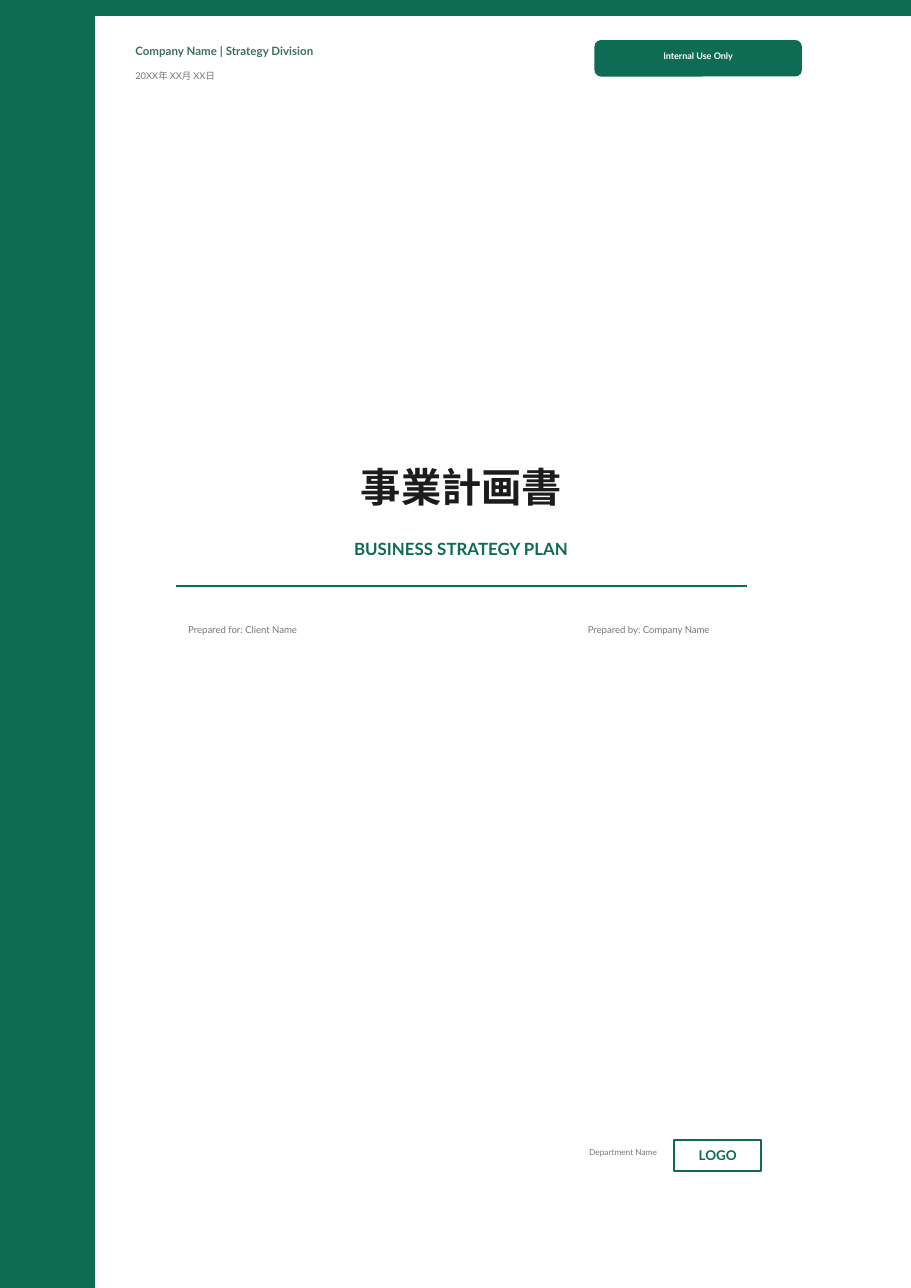
"""Build the cover page of a business strategy plan."""
from lxml.etree import SubElement
from pptx import Presentation
from pptx.dml.color import RGBColor
from pptx.enum.shapes import MSO_CONNECTOR, MSO_SHAPE
from pptx.enum.text import MSO_ANCHOR, PP_ALIGN
from pptx.oxml.ns import qn
from pptx.util import Cm, Pt

COLORS = {
    "green": "0E6B54",
    "soft_green": "3D6F61",
    "gray": "777777",
    "ink": "1C1C1C",
    "white": "FFFFFF",
}
LATIN_FONT = "Lato"
JAPANESE_FONT = "Noto Sans CJK JP"
PAGE_WIDTH, PAGE_HEIGHT = 21, 29.7
SIDEBAR_WIDTH, TOP_BAR_HEIGHT = 2.18, 0.36


def color(name):
    """Return the named palette colour."""
    return RGBColor.from_string(COLORS[name])


def write_text(shape, text, size, color_name, bold=False, align=PP_ALIGN.LEFT, font=LATIN_FONT):
    """Write one vertically centred line without margins into a shape."""
    frame = shape.text_frame
    frame.word_wrap = True
    frame.vertical_anchor = MSO_ANCHOR.MIDDLE
    frame.margin_left = frame.margin_top = frame.margin_right = frame.margin_bottom = 0
    paragraph = frame.paragraphs[0]
    paragraph.alignment = align
    run = paragraph.add_run()
    run.text = text
    run.font.name = font
    run.font.size = Pt(size)
    run.font.bold = bold
    run.font.color.rgb = color(color_name)
    east_asian = SubElement(run._r.get_or_add_rPr(), qn("a:ea"))
    east_asian.set("typeface", JAPANESE_FONT)


def add_label(slide, box, text, size, color_name, **style):
    """Add a text box with one line."""
    shape = slide.shapes.add_textbox(*map(Cm, box))
    write_text(shape, text, size, color_name, **style)


def add_box(slide, kind, box, line_width=0.88, filled=True):
    """Add a green outlined shape, filled or hollow."""
    shape = slide.shapes.add_shape(kind, *map(Cm, box))
    shape.shadow.inherit = False
    if filled:
        shape.fill.solid()
        shape.fill.fore_color.rgb = color("green")
    else:
        shape.fill.background()
    shape.line.color.rgb = color("green")
    shape.line.width = Pt(line_width)
    return shape


def add_rule(slide, left, right, top):
    """Add a thin horizontal green line."""
    rule = slide.shapes.add_connector(MSO_CONNECTOR.STRAIGHT, Cm(left), Cm(top), Cm(right), Cm(top))
    rule.line.color.rgb = color("green")
    rule.line.width = Pt(0.96)
    SubElement(rule._element.spPr, qn("a:effectLst"))


def add_header(slide):
    """Add the company, the date and the confidentiality badge."""
    add_label(slide, (3.12, 0.94, 7.29, 0.48), "Company Name | Strategy Division", 7.5, "soft_green", bold=True)
    add_label(slide, (3.12, 1.55, 4.19, 0.41), "20XX年 XX月 XX日", 6.1, "gray")
    badge = add_box(slide, MSO_SHAPE.ROUNDED_RECTANGLE, (13.72, 0.94, 4.75, 0.81))
    write_text(badge, "Internal Use Only", 5.9, "white", bold=True, align=PP_ALIGN.CENTER)
    badge.text_frame.margin_bottom = Cm(0.13)


def add_title(slide):
    """Add the title, the subtitle and the two parties."""
    add_label(slide, (3.78, 10.59, 13.72, 1.24), "事業計画書", 26.3, "ink",
              bold=True, align=PP_ALIGN.CENTER, font=JAPANESE_FONT)
    add_label(slide, (4.75, 12.34, 11.76, 0.64), "BUSINESS STRATEGY PLAN", 11, "green",
              bold=True, align=PP_ALIGN.CENTER)
    add_rule(slide, 4.06, 17.22, 13.51)
    add_label(slide, (4.34, 14.3, 5.87, 0.43), "Prepared for: Client Name", 6.3, "gray")
    add_label(slide, (10.77, 14.3, 5.59, 0.43), "Prepared by: Company Name", 6.3, "gray", align=PP_ALIGN.RIGHT)


def add_footer(slide):
    """Add the department and the logo placeholder."""
    logo = add_box(slide, MSO_SHAPE.RECTANGLE, (15.54, 26.29, 2.01, 0.71), line_width=1.05, filled=False)
    write_text(logo, "LOGO", 8.8, "green", bold=True, align=PP_ALIGN.CENTER)
    add_label(slide, (12.19, 26.44, 2.95, 0.28), "Department Name", 5.4, "gray", align=PP_ALIGN.RIGHT)


def main():
    """Assemble and save the cover."""
    presentation = Presentation()
    presentation.slide_width = Cm(PAGE_WIDTH)
    presentation.slide_height = Cm(PAGE_HEIGHT)
    slide = presentation.slides.add_slide(presentation.slide_layouts[6])
    add_box(slide, MSO_SHAPE.RECTANGLE, (0, 0, SIDEBAR_WIDTH, PAGE_HEIGHT))
    add_box(slide, MSO_SHAPE.RECTANGLE, (SIDEBAR_WIDTH, 0, PAGE_WIDTH - SIDEBAR_WIDTH, TOP_BAR_HEIGHT))
    add_header(slide)
    add_title(slide)
    add_footer(slide)
    presentation.save("out.pptx")


if __name__ == "__main__":
    main()
